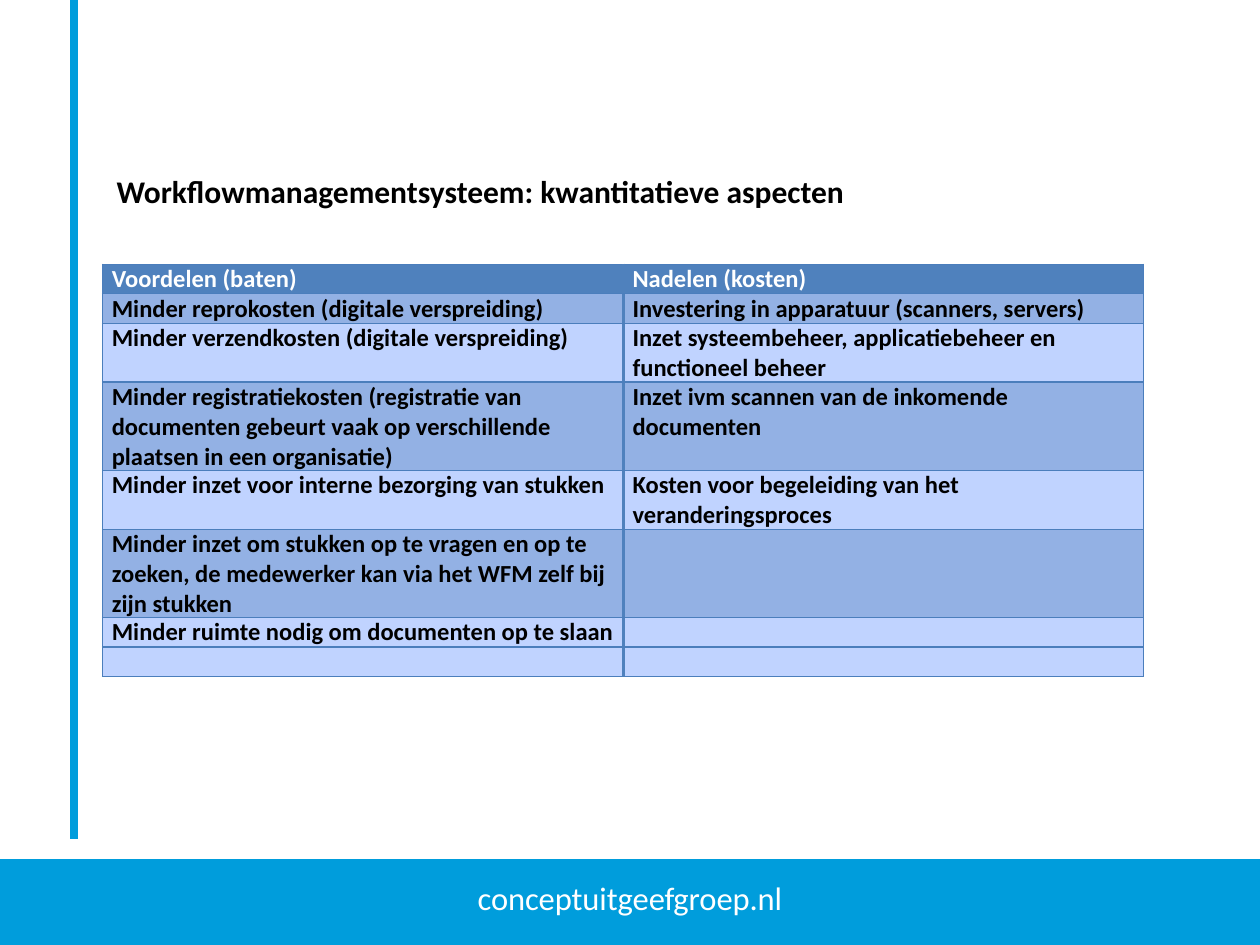
"""Build the slide on quantitative aspects of workflow management."""
from lxml.etree import SubElement
from pptx import Presentation
from pptx.dml.color import RGBColor
from pptx.enum.shapes import MSO_CONNECTOR, MSO_SHAPE
from pptx.enum.text import MSO_ANCHOR, PP_ALIGN
from pptx.oxml.ns import qn
from pptx.util import Pt

TITLE = "Workflowmanagementsysteem: kwantitatieve aspecten"
SITE = "conceptuitgeefgroep.nl"
ROWS = [
    (1, "Voordelen (baten)", "Nadelen (kosten)"),
    (1, "Minder reprokosten (digitale verspreiding)",
     "Investering in apparatuur (scanners, servers)"),
    (2, "Minder verzendkosten (digitale verspreiding)",
     "Inzet systeembeheer, applicatiebeheer en functioneel beheer"),
    (3, "Minder registratiekosten (registratie van documenten gebeurt vaak "
     "op verschillende plaatsen in een organisatie)",
     "Inzet ivm scannen van de inkomende documenten"),
    (2, "Minder inzet voor interne bezorging van stukken",
     "Kosten voor begeleiding van het veranderingsproces"),
    (3, "Minder inzet om stukken op te vragen en op te zoeken, de medewerker "
     "kan via het WFM zelf bij zijn stukken", ""),
    (1, "Minder ruimte nodig om documenten op te slaan", ""),
    (1, "", ""),
]

FONT = "Calibri"
CYAN = RGBColor(0x00, 0x9D, 0xDC)
WHITE = RGBColor(0xFF, 0xFF, 0xFF)
BLACK = RGBColor(0x00, 0x00, 0x00)
HEAD = RGBColor(0x4F, 0x81, 0xBD)
DARK = RGBColor(0x93, 0xB1, 0xE4)
LIGHT = RGBColor(0xC0, 0xD3, 0xFF)
EDGE = RGBColor(0x4B, 0x7E, 0xBC)
WIDTH, HEIGHT = 720, 540
LEFT, TOP, COL, LINE = 58.5, 151, 297.6, 16.8
PAD = 5.4


def write(frame, text, size, color, bold=False):
    frame.text = text
    para = frame.paragraphs[0]
    for run in para.runs:
        font = run.font
        font.name, font.size, font.bold = FONT, Pt(size), bold
        font.color.rgb = color
    if not text:
        para._p.get_or_add_endParaRPr().set("sz", str(size * 100))
    return para


def border(cell, side, color, width):
    line = SubElement(cell._tc.get_or_add_tcPr(), qn("a:" + side),
                      w=str(Pt(width)))
    fill = SubElement(line, qn("a:solidFill"))
    SubElement(fill, qn("a:srgbClr"), val=str(color))


def add_foot(slide):
    bar = slide.shapes.add_shape(MSO_SHAPE.RECTANGLE, 0, Pt(491),
                                 Pt(WIDTH), Pt(HEIGHT - 491))
    bar.shadow.inherit = False
    bar.fill.solid()
    bar.fill.fore_color.rgb = CYAN
    bar.line.fill.background()
    frame = bar.text_frame
    frame.vertical_anchor = MSO_ANCHOR.BOTTOM
    para = write(frame, SITE, 32, WHITE)
    para.alignment = PP_ALIGN.CENTER
    para.runs[0].font._element.set("baseline", "30000")


def add_rule(slide):
    rule = slide.shapes.add_connector(MSO_CONNECTOR.STRAIGHT, Pt(42.5), 0,
                                      Pt(42.5), Pt(479.5))
    rule.line.color.rgb = CYAN
    rule.line.width = Pt(4.5)
    SubElement(rule._element.spPr, qn("a:effectLst"))


def add_title(slide):
    box = slide.shapes.add_textbox(Pt(59.5), Pt(94.5), Pt(635), Pt(51))
    box.text_frame.word_wrap = True
    write(box.text_frame, TITLE, 18, BLACK, True)


def add_grid(slide):
    total = sum(row[0] for row in ROWS)
    table = slide.shapes.add_table(len(ROWS), 2, Pt(LEFT), Pt(TOP),
                                   Pt(2 * COL), Pt(total * LINE)).table
    table.first_row = table.horz_banding = False
    for col in table.columns:
        col.width = Pt(COL)
    last = len(ROWS) - 1
    for r, (lines, *texts) in enumerate(ROWS):
        table.rows[r].height = Pt(lines * LINE)
        shade = HEAD if r == 0 else DARK if r % 2 and r < last else LIGHT
        for c, text in enumerate(texts):
            cell = table.cell(r, c)
            cell.margin_left = cell.margin_right = Pt(PAD)
            cell.margin_top = cell.margin_bottom = 0
            write(cell.text_frame, text, 14, BLACK if r else WHITE, True)
            for n, side in enumerate(("lnL", "lnR", "lnT", "lnB")):
                if n + c == 1:
                    border(cell, side, HEAD, 2)
                else:
                    border(cell, side, EDGE, 0.75)
            cell.fill.solid()
            cell.fill.fore_color.rgb = shade


def main():
    deck = Presentation()
    deck.slide_width, deck.slide_height = Pt(WIDTH), Pt(HEIGHT)
    slide = deck.slides.add_slide(deck.slide_layouts[6])
    for add in (add_foot, add_rule, add_title, add_grid):
        add(slide)
    deck.save("out.pptx")


if __name__ == "__main__":
    main()
